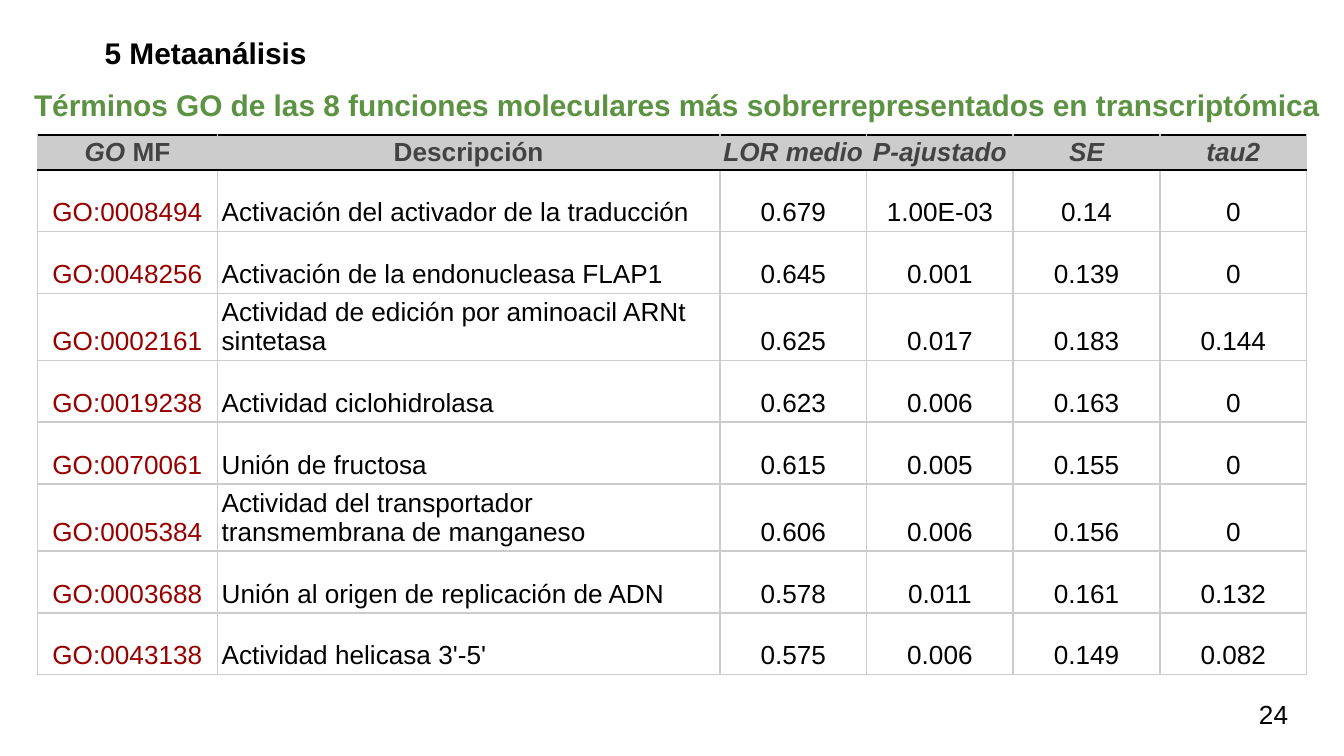
from lxml.etree import SubElement
from pptx import Presentation
from pptx.dml.color import RGBColor
from pptx.enum.text import MSO_ANCHOR, PP_ALIGN
from pptx.oxml.ns import qn
from pptx.util import Pt

COLORS = {
    "black": "000000",
    "green": "5C9343",
    "red": "980000",
    "header_text": "434343",
    "gray": "CCCCCC",
}
FONT = "Arial"
COL_WIDTHS = [96.5, 269.2, 78.6, 78.6, 78.6, 78.6]
HEADER_HEIGHT, ROW_HEIGHT = 17.3, 33.1

# Each heading is a list of (text, italic) runs.
HEADINGS = [
    [("GO ", True), ("MF", False)],
    [("Descripción", False)],
    [("LOR medio", True)],
    [("P-ajustado", True)],
    [("SE", True)],
    [("tau2", True)],
]
ROWS = [
    ("GO:0008494", "Activación del activador de la traducción", "0.679", "1.00E-03", "0.14", "0"),
    ("GO:0048256", "Activación de la endonucleasa FLAP1", "0.645", "0.001", "0.139", "0"),
    ("GO:0002161", "Actividad de edición por aminoacil ARNt sintetasa", "0.625", "0.017", "0.183", "0.144"),
    ("GO:0019238", "Actividad ciclohidrolasa", "0.623", "0.006", "0.163", "0"),
    ("GO:0070061", "Unión de fructosa", "0.615", "0.005", "0.155", "0"),
    ("GO:0005384", "Actividad del transportador transmembrana de manganeso", "0.606", "0.006", "0.156", "0"),
    ("GO:0003688", "Unión al origen de replicación de ADN", "0.578", "0.011", "0.161", "0.132"),
    ("GO:0043138", "Actividad helicasa 3'-5'", "0.575", "0.006", "0.149", "0.082"),
]


def rgb(name):
    return RGBColor.from_string(COLORS[name])


def add_run(p, text, size=14, color="black", bold=False, italic=False):
    r = p.add_run()
    r.text = text
    r.font.name = FONT
    r.font.size = Pt(size)
    r.font.bold = bold
    r.font.italic = italic
    r.font.color.rgb = rgb(color)


def add_text(slide, box, text, align=PP_ALIGN.LEFT, anchor=MSO_ANCHOR.TOP,
             inset=3.6, indent=0, space_before=0, **font):
    sp = slide.shapes.add_textbox(*(Pt(v) for v in box))
    tf = sp.text_frame
    tf.word_wrap = True
    tf.vertical_anchor = anchor
    tf.margin_top = tf.margin_bottom = Pt(inset)
    p = tf.paragraphs[0]
    p.alignment = align
    p.space_before = Pt(space_before)
    if indent:
        pPr = p._p.get_or_add_pPr()
        pPr.set("marL", str(Pt(indent)))
        pPr.set("indent", "0")
    add_run(p, text, **font)


def set_borders(cell, top, bottom):
    """Draw 1 pt borders: gray at the sides, named colours above and below."""
    tcPr = cell._tc.get_or_add_tcPr()
    for side, color in zip("LRTB", ("gray", "gray", top, bottom)):
        ln = SubElement(tcPr, qn(f"a:ln{side}"), w=str(Pt(1)))
        fill = SubElement(ln, qn("a:solidFill"))
        SubElement(fill, qn("a:srgbClr"), val=COLORS[color])


def format_cell(cell, inset, align, top="gray", bottom="gray"):
    """Set the cell's layout and return its paragraph."""
    cell.vertical_anchor = MSO_ANCHOR.BOTTOM
    cell.margin_left = cell.margin_right = Pt(inset)
    cell.margin_top = cell.margin_bottom = Pt(inset)
    set_borders(cell, top, bottom)
    p = cell.text_frame.paragraphs[0]
    p.alignment = align
    return p


def fill_header(table):
    for c, runs in enumerate(HEADINGS):
        cell = table.cell(0, c)
        p = format_cell(cell, 1.5, PP_ALIGN.CENTER, "black", "black")
        cell.fill.solid()
        cell.fill.fore_color.rgb = rgb("gray")
        for text, italic in runs:
            add_run(p, text, color="header_text", bold=True, italic=italic)


def fill_body(table):
    for i, row in enumerate(ROWS, start=1):
        for c, text in enumerate(row):
            cell = table.cell(i, c)
            align = PP_ALIGN.LEFT if c == 1 else PP_ALIGN.CENTER
            p = format_cell(cell, 2.25, align, top="black" if i == 1 else "gray")
            cell.fill.background()
            add_run(p, text, color="red" if c == 0 else "black")


def add_go_table(slide):
    heights = [HEADER_HEIGHT] + [ROW_HEIGHT] * len(ROWS)
    frame = slide.shapes.add_table(
        len(heights), len(COL_WIDTHS),
        Pt(20), Pt(72.3), Pt(sum(COL_WIDTHS)), Pt(sum(heights)))
    table = frame.table
    table.first_row = table.horz_banding = False
    for column, width in zip(table.columns, COL_WIDTHS):
        column.width = Pt(width)
    for row, height in zip(table.rows, heights):
        row.height = Pt(height)
    fill_header(table)
    fill_body(table)


def main():
    prs = Presentation()
    prs.slide_width, prs.slide_height = Pt(720), Pt(405)
    slide = prs.slides.add_slide(prs.slide_layouts[6])
    add_go_table(slide)
    add_text(slide, (8.6, 42.7, 708.5, 26.6),
             "Términos GO de las 8 funciones moleculares más "
             "sobrerrepresentados en transcriptómica",
             align=PP_ALIGN.CENTER, size=16, color="green", bold=True)
    add_text(slide, (20, 15.3, 463, 26.6), "5 Metaanálisis",
             align=PP_ALIGN.JUSTIFY, indent=29, space_before=10,
             size=16, bold=True)
    add_text(slide, (667.4, 367.2, 43.2, 31), "24",
             anchor=MSO_ANCHOR.MIDDLE, inset=7.2)
    prs.save("out.pptx")


if __name__ == "__main__":
    main()
